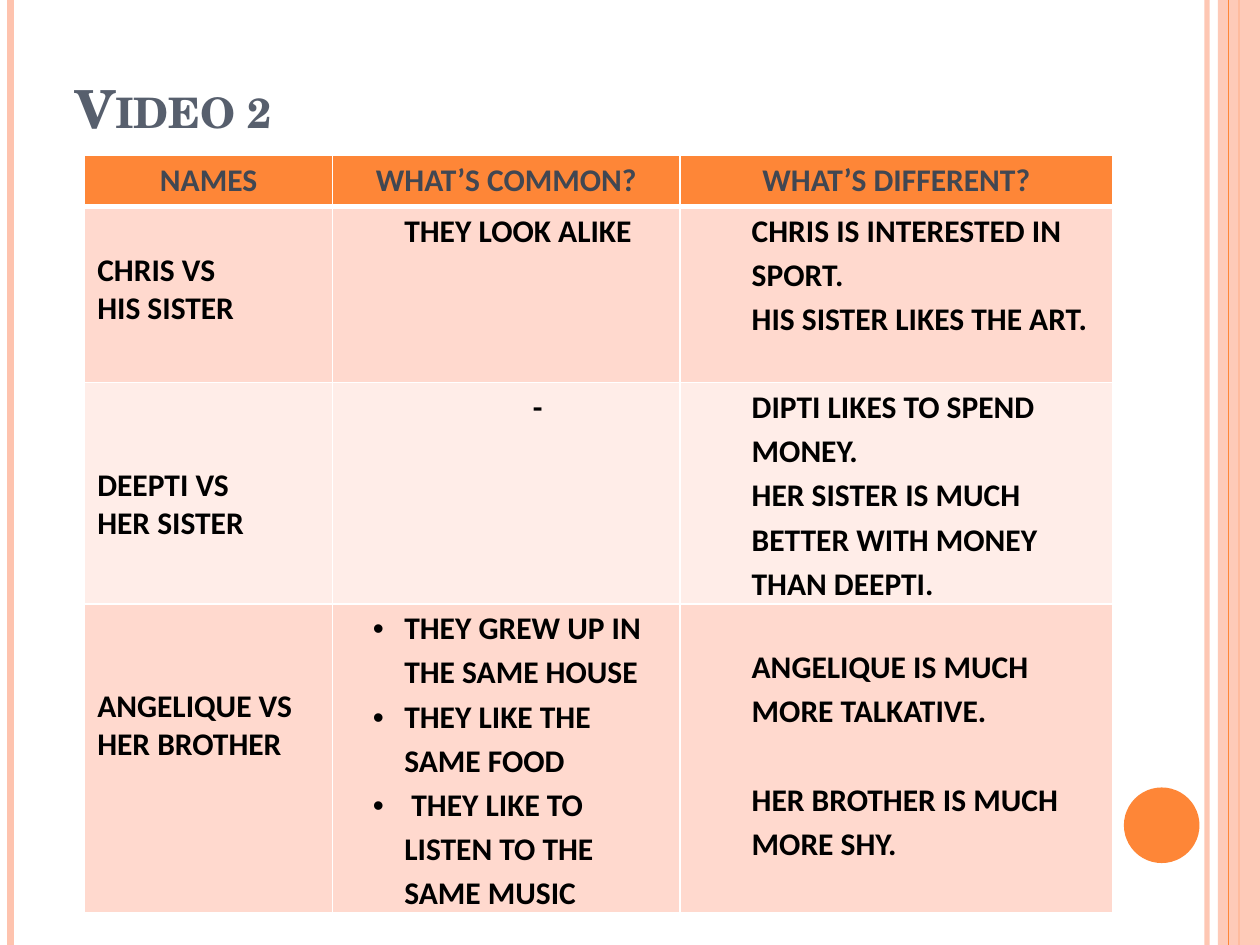
from lxml import etree
from pptx import Presentation
from pptx.dml.color import RGBColor
from pptx.enum.shapes import MSO_CONNECTOR, MSO_SHAPE
from pptx.enum.text import MSO_ANCHOR, PP_ALIGN
from pptx.oxml.ns import qn
from pptx.util import Pt

STRAIGHT = MSO_CONNECTOR.STRAIGHT
RECT, OVAL = MSO_SHAPE.RECTANGLE, MSO_SHAPE.OVAL
BOTTOM = MSO_ANCHOR.BOTTOM
LEFT, CENTER = PP_ALIGN.LEFT, PP_ALIGN.CENTER
WIDE, HIGH = 720, 540

COLORS = {
    "white": "FFFFFF", "black": "000000", "orange": "FE8637",
    "peach": "FEC3AE", "slate": "575F6D", "head": "414752",
    "dark": "FFD9CE", "light": "FFEDE8",
}


class Deck:
    """Holds the style and the current slide."""

    def __init__(self):
        self.prs = Presentation()
        self.prs.slide_width, self.prs.slide_height = Pt(WIDE), Pt(HIGH)
        self.slide = self.prs.slides.add_slide(self.prs.slide_layouts[6])
        self.shapes = self.slide.shapes
        self.font, self.size = "Calibri", 18

    def color(self, name):
        return RGBColor.from_string(COLORS[name])

    def paint(self, fill, name, alpha=100):
        fill.solid()
        fill.fore_color.rgb = self.color(name)
        if alpha < 100:
            for clr in fill._xPr.iter(qn("a:srgbClr")):
                etree.SubElement(clr, qn("a:alpha"), val=str(alpha * 1000))

    def rule(self, x, width, name, alpha=100):
        line = self.shapes.add_connector(STRAIGHT, Pt(x), 0, Pt(x), Pt(HIGH))
        line.line.width = Pt(width)
        self.paint(line.line.fill, name, alpha)
        etree.SubElement(line._element.spPr, qn("a:effectLst"))

    def shape(self, kind, box, name, alpha=100):
        item = self.shapes.add_shape(kind, *map(Pt, box))
        item.shadow.inherit = False
        self.paint(item.fill, name, alpha)
        item.line.fill.background()

    def run(self, para, text, name, font=None, size=None):
        run = para.add_run()
        run.text = text
        run.font.name = font or self.font
        run.font.size = Pt(size or self.size)
        run.font.bold = True
        run.font.color.rgb = self.color(name)
        return run

    def title(self, box, text):
        frame = self.shapes.add_textbox(*map(Pt, box)).text_frame
        frame.word_wrap = True
        frame.vertical_anchor = BOTTOM
        run = self.run(frame.paragraphs[0], text, "slate", "TeX Gyre Schola", 30)
        run._r.get_or_add_rPr().set("cap", "small")

    def table(self, x, y, cols, rows):
        grid = self.shapes.add_table(len(rows), len(cols), Pt(x), Pt(y),
                                     Pt(sum(cols)), Pt(sum(rows))).table
        for col, width in zip(grid.columns, cols):
            col.width = Pt(width)
        for row, height in zip(grid.rows, rows):
            row.height = Pt(height)
        return grid

    def edges(self, cell, top=1, bottom=1):
        props = cell._tc.get_or_add_tcPr()
        for side, width in zip("LRTB", (1, 1, top, bottom)):
            edge = etree.SubElement(props, qn("a:ln" + side), w=str(Pt(width)))
            fill = etree.SubElement(edge, qn("a:solidFill"))
            etree.SubElement(fill, qn("a:srgbClr"), val=COLORS["white"])

    def cell(self, cell, lines, fill, name="black", align=LEFT, top=3.6,
             gap=0, inset=False, bullet=False, edges=(1, 1)):
        self.edges(cell, *edges)
        self.paint(cell.fill, fill)
        cell.margin_top = Pt(top)
        if inset:
            cell.margin_left = cell.margin_right = Pt(5)
            cell.margin_bottom = 0
        frame = cell.text_frame
        for i, text in enumerate(lines):
            para = frame.add_paragraph() if i else frame.paragraphs[0]
            para.alignment = align
            if i and gap:
                para.space_before = Pt(gap)
            if inset:
                para.line_spacing = 1.15
                self.indent(para, bullet)
            self.run(para, text, name)

    def indent(self, para, bullet):
        props = para._p.get_or_add_pPr()
        props.set("marL", str(Pt(36)))
        props.set("indent", str(Pt(-18 if bullet else 0)))
        if bullet:
            etree.SubElement(props, qn("a:buFont"), typeface="Arial")
            etree.SubElement(props, qn("a:buChar"), char="•")


HEADS = ("NAMES", "WHAT’S COMMON?", "WHAT’S DIFFERENT?")

# Each row: (lines, options) for the name, common and different cells
BODY = [
    ((["CHRIS VS", "HIS SISTER"], {"top": 25.6}),
     (["THEY LOOK ALIKE"], {}),
     (["CHRIS IS INTERESTED IN SPORT.", "HIS SISTER LIKES THE ART."], {})),
    ((["DEEPTI VS", "HER SISTER"], {"top": 47.6}),
     (["-"], {"align": CENTER}),
     (["DIPTI LIKES TO SPEND MONEY.",
       "HER SISTER IS MUCH BETTER WITH MONEY THAN DEEPTI."], {})),
    ((["ANGELIQUE VS", "HER BROTHER"], {"top": 47.6}),
     (["THEY GREW UP IN THE SAME HOUSE", "THEY LIKE THE SAME FOOD",
       " THEY LIKE TO LISTEN TO THE SAME MUSIC"], {"bullet": True}),
     (["ANGELIQUE IS MUCH MORE TALKATIVE.", "HER BROTHER IS MUCH MORE SHY."],
      {"top": 22.2, "gap": 25.2})),
]


def main():
    deck = Deck()

    # Side bands and dot
    deck.rule(689.76, 3, "peach", 93)
    deck.rule(6, 4.5, "peach")
    deck.rule(708, 1.5, "orange")
    deck.shape(RECT, (696, 0, 24, HIGH), "peach", 87)
    deck.rule(702, 0.75, "orange")
    deck.shape(OVAL, (642.24, 450, 43.2, 43.2), "orange")

    # Title
    deck.title((36, 21.6, 624, 61.2), "Video 2")

    # Comparison table
    grid = deck.table(48.4, 88.6, (141.7, 198.5, 247.3),
                      (29.3, 100.8, 126.4, 176.6))
    for c, text in enumerate(HEADS):
        deck.cell(grid.cell(0, c), [text], "orange", "head", CENTER,
                  edges=(1, 3))
    for r, row in enumerate(BODY, 1):
        fill = "dark" if r % 2 else "light"
        edges = (3 if r == 1 else 1, 1)
        for c, (lines, opts) in enumerate(row):
            base = {"inset": True, "top": 0} if c else {}
            deck.cell(grid.cell(r, c), lines, fill, edges=edges,
                      **{**base, **opts})

    deck.prs.save("out.pptx")


if __name__ == "__main__":
    main()
